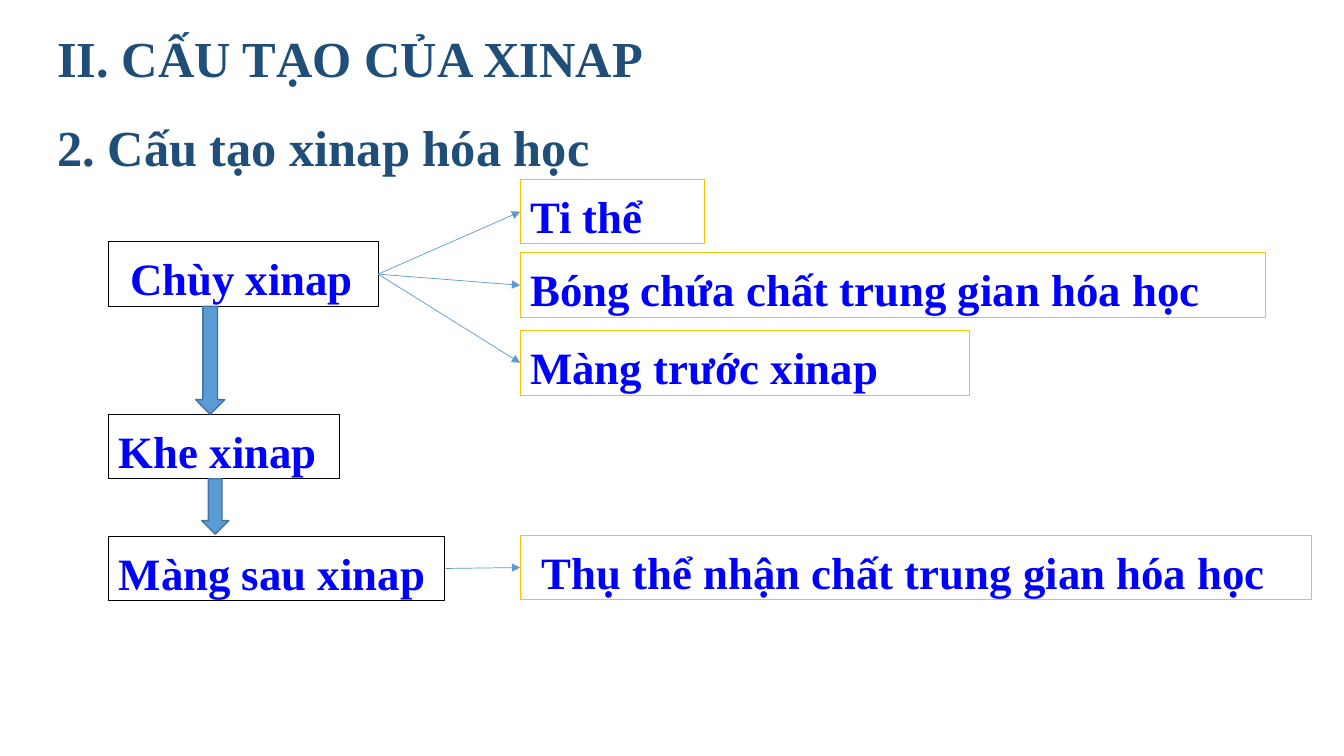
from pptx import Presentation
from pptx.dml.color import RGBColor
from pptx.enum.shapes import MSO_CONNECTOR, MSO_SHAPE
from pptx.enum.text import MSO_ANCHOR, PP_ALIGN
from pptx.oxml.ns import qn
from pptx.util import Inches, Pt
from lxml import etree

FONT = "Times New Roman"
NAVY, BLUE, SKY, EDGE = "1F4E79", "0000FF", "5B9BD5", "43739E"
GOLD, BLACK = "FFC000", "000000"
HIGH = 0.64  # height of every label box


def color(code):
    return RGBColor.from_string(code)


def write(frame, lines, size, code, left=0.1, top=0.09, gap=0):
    frame.word_wrap = True
    frame.vertical_anchor = MSO_ANCHOR.TOP
    frame.margin_left, frame.margin_top = Inches(left), Inches(top)
    frame.margin_right, frame.margin_bottom = Inches(0.1), Inches(0)
    for i, line in enumerate(lines):
        para = frame.add_paragraph() if i else frame.paragraphs[0]
        para.alignment = PP_ALIGN.LEFT
        if i:
            para.space_before = Pt(gap)
        run = para.add_run()
        run.text = line
        font = run.font
        font.name, font.size, font.bold = FONT, Pt(size), True
        font.color.rgb = color(code)


def shape(slide, kind, box, line, width, fill=None):
    item = slide.shapes.add_shape(kind, *map(Inches, box))
    item.shadow.inherit = False
    if fill:
        item.fill.solid()
        item.fill.fore_color.rgb = color(fill)
    else:
        item.fill.background()
    item.line.color.rgb = color(line)
    item.line.width = Pt(width)
    return item


def label(slide, text, x, y, wide, line, left=0.1):
    item = shape(slide, MSO_SHAPE.RECTANGLE, (x, y, wide, HIGH), line, 0.75)
    write(item.text_frame, [text], 32, BLUE, left)


def arrow(slide, start, end):
    item = slide.shapes.add_connector(
        MSO_CONNECTOR.STRAIGHT, *map(Inches, (*start, *end)))
    item.line.color.rgb = color(SKY)
    item.line.width = Pt(0.5)
    props = item._element.spPr
    tip = etree.SubElement(props.find(qn("a:ln")), qn("a:tailEnd"))
    tip.set("type", "triangle")
    etree.SubElement(props, qn("a:effectLst"))


def heading(slide, x, y, wide, high):
    item = slide.shapes.add_textbox(*map(Inches, (x, y, wide, high)))
    lines = ["II. CẤU TẠO CỦA XINAP", "2. Cấu tạo xinap hóa học"]
    write(item.text_frame, lines, 36, NAVY, top=0.11, gap=20)


def chain(slide, x, y):
    # Main parts, top to bottom
    label(slide, "Chùy xinap", x, y, 2.67, BLACK, 0.21)
    label(slide, "Khe xinap", x, y + 1.71, 2.29, BLACK)
    label(slide, "Màng sau xinap", x, y + 2.92, 3.33, BLACK)
    # Block arrows between them
    for box in ((x + 0.86, y + HIGH, 0.29, 1.07),
                (x + 0.92, y + 2.35, 0.27, 0.55)):
        shape(slide, MSO_SHAPE.DOWN_ARROW, box, EDGE, 1, SKY)


def branch(slide, x, start, leaves):
    # Detail boxes, each with an arrow from the main part
    for text, y, wide, left in leaves:
        label(slide, text, x, y, wide, GOLD, left)
        arrow(slide, start, (x, y + HIGH / 2))


def main():
    deck = Presentation()
    deck.slide_width, deck.slide_height = Inches(13.33), Inches(7.5)
    slide = deck.slides.add_slide(deck.slide_layouts[6])
    heading(slide, 0.47, 0.16, 6.9, 1.62)
    chain(slide, 1.08, 2.4)
    branch(slide, 5.16, (3.75, 2.72), [
        ("Ti thể", 1.78, 1.83, 0.1),
        ("Bóng chứa chất trung gian hóa học", 2.51, 7.39, 0.1),
        ("Màng trước xinap", 3.28, 4.46, 0.1),
    ])
    branch(slide, 5.16, (4.42, 5.64), [
        ("Thụ thể nhận chất trung gian hóa học", 5.31, 7.85, 0.21),
    ])
    deck.save("out.pptx")


if __name__ == "__main__":
    main()
